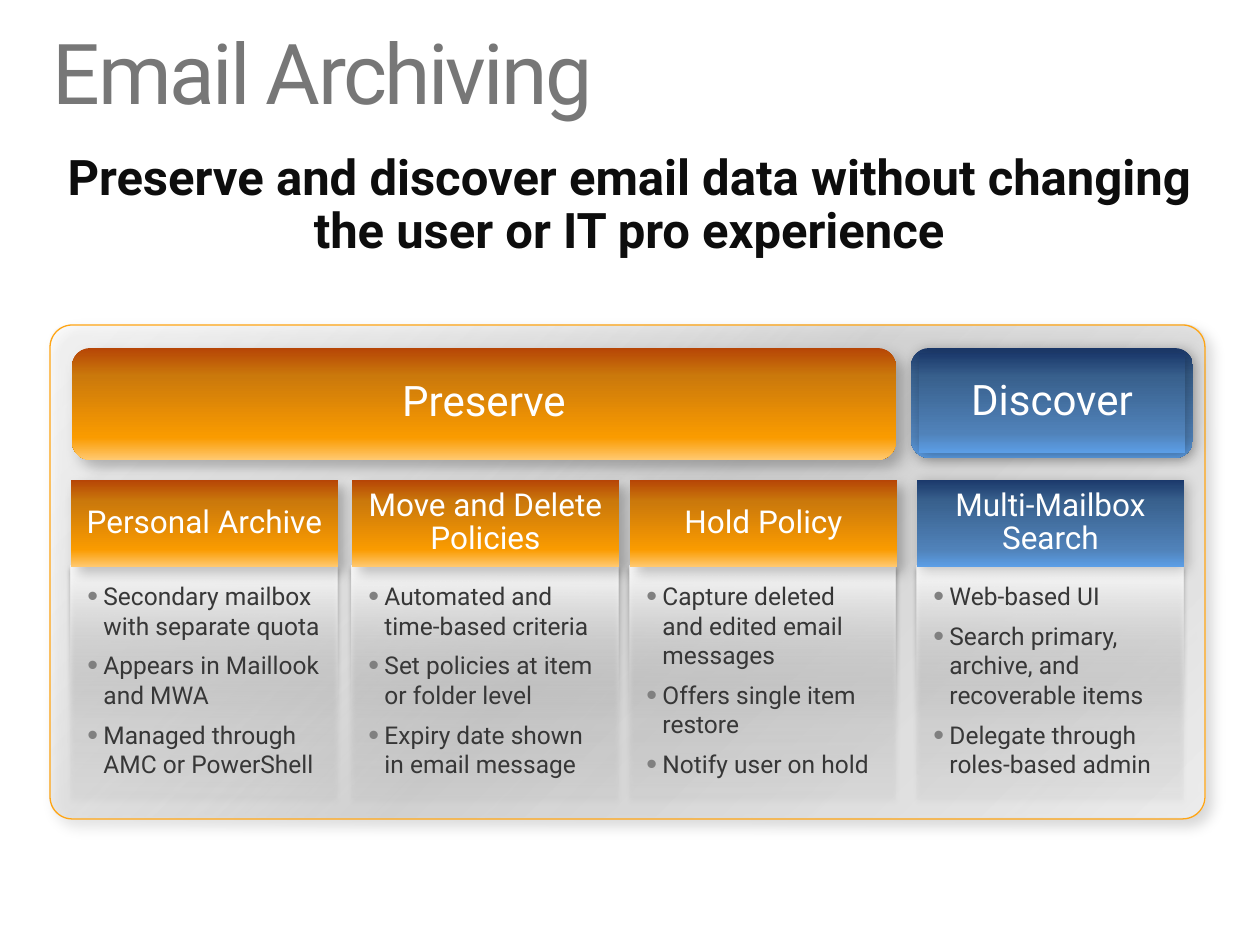
from lxml.etree import SubElement
from pptx import Presentation
from pptx.dml.color import RGBColor
from pptx.enum.shapes import MSO_SHAPE as Shape
from pptx.enum.text import MSO_ANCHOR as Anchor, PP_ALIGN as Align
from pptx.oxml.ns import qn
from pptx.util import Inches, Pt

PX = Inches(10) / 1260
FONT = "Roboto"
WHITE = RGBColor(0xFF, 0xFF, 0xFF)
BLACK = RGBColor(0x00, 0x00, 0x00)
INK = RGBColor(0x0D, 0x0D, 0x0D)
TITLE_GRAY = RGBColor(0x77, 0x77, 0x77)
BODY_GRAY = RGBColor(0x37, 0x37, 0x37)
BULLET_GRAY = RGBColor(0x80, 0x80, 0x80)
EDGE_ORANGE = RGBColor(0xFF, 0xA5, 0x14)
PALE = RGBColor(0xF2, 0xF2, 0xF2)
SILVER = RGBColor(0xCC, 0xCC, 0xCC)

# Gradient stops: position %, colour, opacity %
PANEL_FILL = [(0, PALE, 80), (50, SILVER, 69), (100, PALE, 29)]
BODY_FILL = [(0, RGBColor(0xC2, 0xC2, 0xC2), 5),
             (35, RGBColor(0xD4, 0xD4, 0xD4), 19), (100, WHITE, 100)]
ORANGE = [(0, RGBColor(0xB6, 0x45, 0x06), 100), (25, RGBColor(0xCB, 0x79, 0x0B), 100),
          (80, RGBColor(0xFA, 0x9B, 0x00), 100), (100, RGBColor(0xFF, 0xC9, 0x71), 100)]
BLUE = [(0, RGBColor(0x1B, 0x39, 0x6B), 100), (25, RGBColor(0x39, 0x61, 0x8E), 100),
        (80, RGBColor(0x50, 0x82, 0xB9), 100), (100, RGBColor(0x5C, 0x9E, 0xE6), 100)]

# Shadows: opacity %, blur pt, distance pt, direction in degrees
PANEL_SHADOW = (20, 8, 5, 45)
ORANGE_SHADOW = (25, 8, 5, 45)
BLUE_SHADOW = (25, 8, 2, 45)
BODY_SHADOW = (38, 3.1, 1.6, 90)


def add_block(shapes, kind, box, stops, shadow, angle=90):
    """Add a borderless shape with a clockwise gradient angle and an outer shadow."""
    block = shapes.add_shape(kind, *[round(v * PX) for v in box])
    block.fill.gradient()
    block.fill.gradient_angle = 360 - angle
    properties = block._element.spPr
    stop_list = properties.find(".//" + qn("a:gsLst"))
    stop_list.clear()
    for position, color, opacity in stops:
        stop = SubElement(stop_list, qn("a:gs"), pos=str(position * 1000))
        tint = SubElement(stop, qn("a:srgbClr"), val=str(color))
        SubElement(tint, qn("a:alpha"), val=str(opacity * 1000))
    block.line.fill.background()
    block.shadow.inherit = False
    opacity, blur, distance, direction = shadow
    outer = SubElement(properties.find(qn("a:effectLst")), qn("a:outerShdw"),
                       blurRad=str(Pt(blur)), dist=str(Pt(distance)),
                       dir=str(direction * 60000), algn="tl", rotWithShape="0")
    tint = SubElement(outer, qn("a:srgbClr"), val=str(BLACK))
    SubElement(tint, qn("a:alpha"), val=str(opacity * 1000))
    return block


def write(holder, lines, size, color, bold=False, anchor=Anchor.TOP, **layout):
    """Fill a shape with one paragraph per line; layout holds paragraph attributes."""
    frame = holder.text_frame
    frame.word_wrap = True
    frame.vertical_anchor = anchor
    for index, line in enumerate(lines):
        paragraph = frame.add_paragraph() if index else frame.paragraphs[0]
        for name, value in layout.items():
            setattr(paragraph, name, value)
        run = paragraph.add_run()
        run.text = line
        for name, value in {"name": FONT, "size": Pt(size), "bold": bold}.items():
            setattr(run.font, name, value)
        run.font.color.rgb = color
    return frame


prs = Presentation()
prs.slide_width, prs.slide_height = Inches(10), Inches(7.5)
slide = prs.slides.add_slide(prs.slide_layouts[6])
shapes = slide.shapes

panel = add_block(shapes, Shape.ROUNDED_RECTANGLE, (50, 325, 1155, 494),
                  PANEL_FILL, PANEL_SHADOW, angle=225)
panel.adjustments[0] = 0.045
panel.line.color.rgb = EDGE_ORANGE
panel.line.width = Pt(0.75)

title = shapes.add_textbox(*[round(v * PX) for v in (53, 32, 1155, 92)])
title_frame = write(title, ["Email Archiving"], 48, TITLE_GRAY, line_spacing=0.9)
for side in ("left", "top", "right", "bottom"):
    setattr(title_frame, f"margin_{side}", 0)
title_frame.paragraphs[0].runs[0]._r.get_or_add_rPr().set("spc", "-150")

subtitle = shapes.add_textbox(*[round(v * PX) for v in (32, 147, 1194, 120)])
write(subtitle,
      ["Preserve and discover email data without changing the user or IT pro experience"],
      28, INK, bold=True, alignment=Align.CENTER, line_spacing=0.9)

heading = {"color": WHITE, "anchor": Anchor.MIDDLE,
           "alignment": Align.CENTER, "line_spacing": 0.85}

preserve = add_block(shapes, Shape.ROUNDED_RECTANGLE, (72, 348, 824, 112),
                     ORANGE, ORANGE_SHADOW)
write(preserve, ["Preserve"], 24, **heading)

discover = shapes.add_group_shape().shapes
add_block(discover, Shape.ROUNDED_RECTANGLE, (911, 348, 282, 110), BLUE, BLUE_SHADOW)
discover_face = add_block(discover, Shape.RECTANGLE, (919, 353, 266, 100),
                          BLUE, BLUE_SHADOW)
write(discover_face, ["Discover"], 24, **heading)

columns = [
    (71, "Personal Archive", ORANGE, ORANGE_SHADOW,
     ["Secondary mailbox with separate quota", "Appears in Maillook and MWA",
      "Managed through AMC or PowerShell"]),
    (352, "Move and Delete Policies", ORANGE, ORANGE_SHADOW,
     ["Automated and time-based criteria", "Set policies at item or folder level",
      "Expiry date shown in email message"]),
    (630, "Hold Policy", ORANGE, ORANGE_SHADOW,
     ["Capture deleted and edited email messages", "Offers single item restore",
      "Notify user on hold"]),
    (917, "Multi-Mailbox Search", BLUE, BLUE_SHADOW,
     ["Web-based UI", "Search primary, archive, and recoverable items",
      "Delegate through roles-based admin"]),
]
for left, name, stops, shadow, points in columns:
    body = add_block(shapes, Shape.ROUNDED_RECTANGLE, (left, 566, 266, 233),
                     BODY_FILL, BODY_SHADOW, angle=270)
    body.adjustments[0] = 0

    details = shapes.add_textbox(*[round(v * PX) for v in (left + 4, 575, 260, 213)])
    details_frame = write(details, points, 14, BODY_GRAY, space_after=Pt(6))
    for paragraph in details_frame.paragraphs:
        bullet = paragraph._p.get_or_add_pPr()
        bullet.set("marL", str(round(16 * PX)))
        bullet.set("indent", str(round(-16 * PX)))
        bullet_color = SubElement(bullet, qn("a:buClr"))
        SubElement(bullet_color, qn("a:srgbClr"), val=str(BULLET_GRAY))
        SubElement(bullet, qn("a:buSzPct"), val="125000")
        SubElement(bullet, qn("a:buFont"), typeface="Arial")
        SubElement(bullet, qn("a:buChar"), char="•")

    header = add_block(shapes, Shape.RECTANGLE, (left, 480, 267, 87), stops, shadow)
    write(header, [name], 18, **heading)

prs.save("out.pptx")
